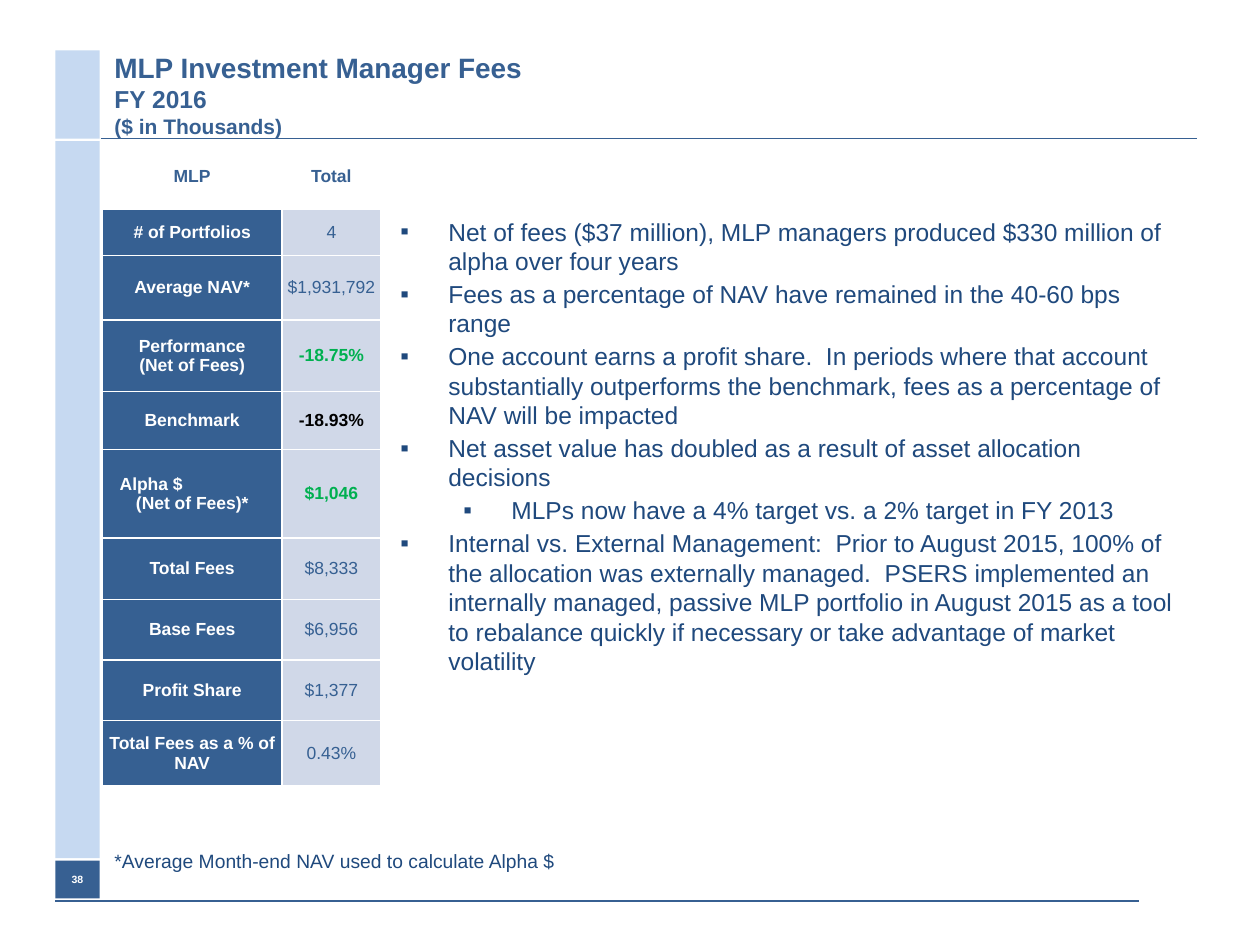
from dataclasses import dataclass
from lxml.etree import SubElement as Sub
from pptx import Presentation
from pptx.dml.color import RGBColor as Rgb
from pptx.enum.shapes import MSO_CONNECTOR as Connector, MSO_SHAPE as Shape
from pptx.enum.text import MSO_ANCHOR as Anchor, PP_ALIGN as Align
from pptx.oxml.ns import qn
from pptx.util import Inches, Pt


@dataclass(frozen=True)
class Theme:
    font: str = "Arial"
    blue: str = "376092"
    label: str = "366092"
    value: str = "D0D8E8"
    pale: str = "C6D9F1"
    ink: str = "1F497D"
    gain: str = "00B050"
    black: str = "000000"
    white: str = "FFFFFF"
    title: tuple = (16, 14, 12)
    body: int = 14
    note: int = 11
    table: int = 10
    number: int = 6


@dataclass(frozen=True)
class Box:
    left: float
    top: float
    width: float
    height: float

    def place(self):
        return [grid(n) for n in (self.left, self.top, self.width, self.height)]


THEME = Theme()
COLUMNS, ROWS = 100, 75
TITLE = ("MLP Investment Manager Fees", "FY 2016", "($ in Thousands)")
TABLE_COLUMNS = (14.3, 7.8)
FEES = (
    (3.7, "# of Portfolios", "4", None),
    (5.1, "Average NAV*", "$1,931,792", None),
    (5.7, "Performance\n(Net of Fees)", "-18.75%", THEME.gain),
    (4.6, "Benchmark", "-18.93%", THEME.black),
    (7.0, "Alpha $\n(Net of Fees)*", "$1,046", THEME.gain),
    (4.9, "Total Fees", "$8,333", None),
    (4.8, "Base Fees", "$6,956", None),
    (4.8, "Profit Share", "$1,377", None),
    (5.2, "Total Fees as a % of NAV", "0.43%", None),
)
BULLETS = (
    (0, "Net of fees ($37 million), MLP managers produced $330 million of alpha over four years"),
    (0, "Fees as a percentage of NAV have remained in the 40-60 bps range"),
    (0, "One account earns a profit share.  In periods where that account substantially "
        "outperforms the benchmark, fees as a percentage of NAV will be impacted"),
    (0, "Net asset value has doubled as a result of asset allocation decisions"),
    (1, "MLPs now have a 4% target vs. a 2% target in FY 2013"),
    (0, "Internal vs. External Management:  Prior to August 2015, 100% of the allocation was "
        "externally managed.  PSERS implemented an internally managed, passive MLP portfolio in "
        "August 2015 as a tool to rebalance quickly if necessary or take advantage of market "
        "volatility"),
)


def grid(units):
    return Inches(units / 10)


def write(para, text, size, color, bold=False, align=None):
    span = para.add_run()
    span.text = text
    span.font.name = THEME.font
    span.font.size = Pt(size)
    span.font.bold = bold
    span.font.color.rgb = Rgb.from_string(color)
    if align is not None:
        para.alignment = align


def add_frame(page, box, anchor=Anchor.MIDDLE):
    frame = page.shapes.add_textbox(*box.place()).text_frame
    frame.word_wrap = True
    frame.vertical_anchor = anchor
    return frame


def add_block(page, box, color):
    block = page.shapes.add_shape(Shape.RECTANGLE, *box.place())
    block.shadow.inherit = False
    block.fill.solid()
    block.fill.fore_color.rgb = Rgb.from_string(color)
    block.line.fill.background()
    return block


def add_rule(page, left, right, top, weight):
    ends = [grid(n) for n in (left, top, right, top)]
    rule = page.shapes.add_connector(Connector.STRAIGHT, *ends)
    rule.line.color.rgb = Rgb.from_string(THEME.blue)
    rule.line.width = Pt(weight)
    Sub(rule._element.spPr, qn("a:effectLst"))


def add_sidebar(page, box):
    gap, head, foot = 0.2, 7, 3
    middle = box.height - head - foot - 2 * gap
    top = box.top
    for height, color in ((head, THEME.pale), (middle, THEME.pale), (foot, THEME.blue)):
        block = add_block(page, Box(box.left, top, box.width, height), color)
        top += height + gap
    frame = block.text_frame
    frame.margin_left = frame.margin_right = 0
    frame.vertical_anchor = Anchor.MIDDLE
    write(frame.paragraphs[0], "38", THEME.number, THEME.white, bold=True, align=Align.CENTER)


def add_title(page, box):
    para = add_frame(page, box).paragraphs[0]
    for index, (text, size) in enumerate(zip(TITLE, THEME.title)):
        if index:
            para.add_line_break()
        write(para, text, size, THEME.blue, bold=True)


def fill_cell(cell, text, fill, color, bold):
    cell.margin_left = cell.margin_right = cell.margin_top = cell.margin_bottom = 0
    cell.vertical_anchor = Anchor.MIDDLE
    properties = cell._tc.get_or_add_tcPr()
    for side in ("lnL", "lnR", "lnT", "lnB"):
        border = Sub(properties, qn(f"a:{side}"), w=str(Pt(1)))
        Sub(Sub(border, qn("a:solidFill")), qn("a:srgbClr"), val=THEME.white)
    cell.fill.solid()
    cell.fill.fore_color.rgb = Rgb.from_string(fill)
    frame = cell.text_frame
    for index, line in enumerate(text.split("\n")):
        para = frame.add_paragraph() if index else frame.paragraphs[0]
        align = Align.CENTER
        if line == "Alpha $":
            align = Align.LEFT
            para._p.get_or_add_pPr().set("marL", str(grid(1.4)))
        write(para, line, THEME.table, color, bold=bold, align=align)


def add_fee_table(page, box):
    table = page.shapes.add_table(len(FEES) + 1, 2, *box.place()).table
    table.first_row = table.horz_banding = False
    for column, width in zip(table.columns, TABLE_COLUMNS):
        column.width = grid(width)
    table.rows[0].height = grid(5.2)
    for column, text in enumerate(("MLP", "Total")):
        fill_cell(table.cell(0, column), text, THEME.white, THEME.blue, True)
    for row, (height, label, value, accent) in enumerate(FEES, 1):
        table.rows[row].height = grid(height)
        fill_cell(table.cell(row, 0), label, THEME.label, THEME.white, True)
        fill_cell(table.cell(row, 1), value, THEME.value, accent or THEME.label, bool(accent))


def add_bullets(page, box):
    frame = add_frame(page, box, Anchor.TOP)
    for index, (level, text) in enumerate(BULLETS):
        para = frame.add_paragraph() if index else frame.paragraphs[0]
        para.level = level
        para.space_before = Pt(2 if index else 0)
        properties = para._p.get_or_add_pPr()
        properties.set("marL", str(grid(3.8 + 5 * level)))
        properties.set("indent", str(grid(-3.8)))
        Sub(properties, qn("a:buFont"), typeface=THEME.font)
        Sub(properties, qn("a:buChar"), char="▪")
        write(para, text, THEME.body, THEME.ink)


def add_footnote(page, box):
    para = add_frame(page, box).paragraphs[0]
    write(para, "*Average Month-end NAV used to calculate Alpha $", THEME.note, THEME.ink)


def main():
    deck = Presentation()
    deck.slide_width, deck.slide_height = grid(COLUMNS), grid(ROWS)
    page = deck.slides.add_slide(deck.slide_layouts[6])
    add_rule(page, 4.4, 90.4, 71.5, 0.75)
    add_sidebar(page, Box(4.4, 4, 3.5, 67.3))
    add_rule(page, 8, 95, 11, 1)
    add_title(page, Box(8.1, 4, 86.9, 7))
    add_bullets(page, Box(30.8, 16.7, 64.1, 40.4))
    add_footnote(page, Box(8.1, 66.3, 56.7, 4))
    add_fee_table(page, Box(8.1, 11.4, 22.1, 51))
    deck.save("out.pptx")


if __name__ == "__main__":
    main()
